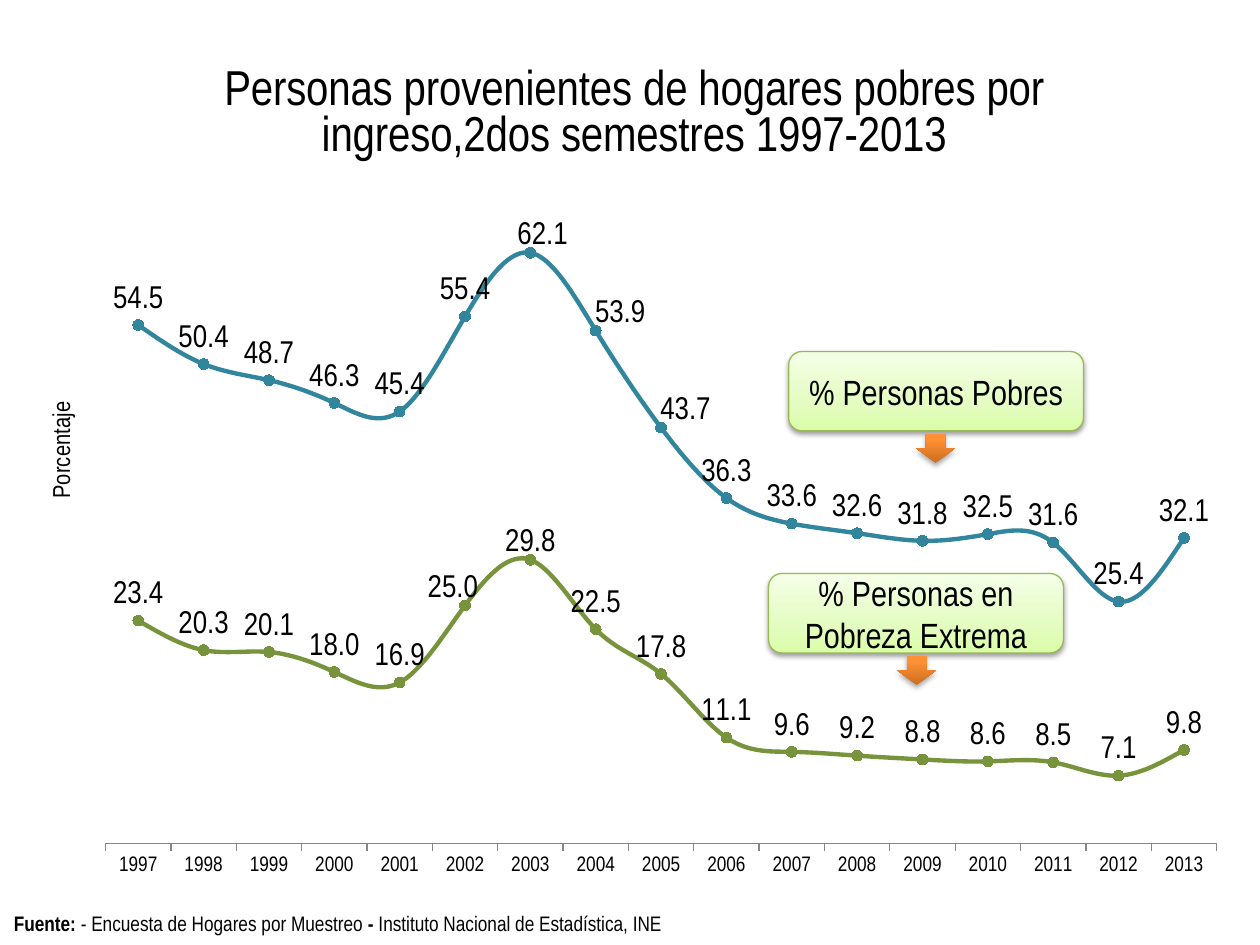
from dataclasses import dataclass

from lxml import etree
from pptx import Presentation
from pptx import util as u
from pptx.chart.data import CategoryChartData
from pptx.dml.color import RGBColor
from pptx.enum import chart as c
from pptx.enum import shapes, text
from pptx.oxml import parse_xml
from pptx.oxml.ns import nsdecls, qn

WIDTH, HEIGHT = 10, 7.5
FONT = "Arial Narrow"
BLACK = "000000"
YEARS = [str(year) for year in range(1997, 2014)]


@dataclass
class Trend:
    name: str
    colour: str
    values: list[float]
    label_shifts: dict[int, tuple[float, float]]


@dataclass
class Callout:
    label: str
    left: float
    top: float
    arrow_shift: float


@dataclass
class Finish:
    stops: list[tuple[int, str]]
    shadow_alpha: int
    shadow_distance: float


TRENDS = [
    Trend("% Personas Pobres", "31859C",
          [54.5, 50.4, 48.7, 46.3, 45.4, 55.4, 62.1, 53.9, 43.7, 36.3,
           33.6, 32.6, 31.8, 32.5, 31.6, 25.4, 32.1],
          {6: (0.01, 0.01), 7: (0.02, 0.01), 8: (0.02, 0.01)}),
    Trend("% Personas en Pobreza Extrema", "77933C",
          [23.4, 20.3, 20.1, 18.0, 16.9, 25.0, 29.8, 22.5, 17.8, 11.1,
           9.6, 9.2, 8.8, 8.6, 8.5, 7.1, 9.8],
          {5: (-0.01, 0.01), 6: (0, 0.01)}),
]
CALLOUTS = [
    Callout(TRENDS[0].name, 0.626, 0.372, 0.105),
    Callout(TRENDS[1].name, 0.61, 0.607, 0.106),
]
GREEN = Finish([(0, "DAFDA7"), (35, "E4FCC2"), (100, "F5FFE7")], 38, 1.6)
ORANGE = Finish([(0, "CC6E20"), (80, "FF9034"), (100, "FF9136")], 35, 1.8)


def rgb(colour: str) -> RGBColor:
    return RGBColor.from_string(colour)


def across(share: float) -> int:
    return u.Inches(WIDTH * share)


def down(share: float) -> int:
    return u.Inches(HEIGHT * share)


def set_font(font, size: float) -> None:
    font.name, font.size, font.bold = FONT, u.Pt(size), False
    font.color.rgb = rgb(BLACK)


def layout(x: float, y: float, size: tuple[float, float] | None = None,
           edge: bool = True):
    parts = [("layoutTarget", "inner")] if size else []
    if edge:
        parts += [("xMode", "edge"), ("yMode", "edge")]
    parts += [("x", x), ("y", y)]
    if size:
        parts += [("w", size[0]), ("h", size[1])]
    body = "".join(f'<c:{tag} val="{value}"/>' for tag, value in parts)
    return parse_xml(f'<c:layout {nsdecls("c")}><c:manualLayout>{body}'
                     '</c:manualLayout></c:layout>')


def place(element, new_layout, after: str | None) -> None:
    for old in element.findall(qn("c:layout")):
        element.remove(old)
    if after:
        element.find(qn(after)).addnext(new_layout)
    else:
        element.insert(0, new_layout)


def style_trend(series, element, trend: Trend) -> None:
    series.smooth = True
    series.format.line.color.rgb = rgb(trend.colour)
    series.format.line.width = u.Pt(2.5)
    series.marker.style, series.marker.size = c.XL_MARKER_STYLE.CIRCLE, 6
    series.marker.format.fill.solid()
    series.marker.format.fill.fore_color.rgb = rgb(trend.colour)
    series.marker.format.line.color.rgb = rgb(trend.colour)
    labels = series.data_labels
    labels.show_value, labels.position = True, c.XL_LABEL_POSITION.ABOVE
    labels.number_format, labels.number_format_is_linked = "0.0", False
    set_font(labels.font, 18)
    for index in trend.label_shifts:
        label = series.points[index].data_label
        label.position = c.XL_LABEL_POSITION.ABOVE
        set_font(label.font, 18)
    for label in element.iter(qn("c:dLbl")):
        index = int(label.find(qn("c:idx")).get("val"))
        place(label, layout(*trend.label_shifts[index], edge=False), "c:idx")


def draw_chart(slide) -> None:
    data = CategoryChartData(number_format="0.0")
    data.categories = YEARS
    for trend in TRENDS:
        data.add_series(trend.name, trend.values)
    chart = slide.shapes.add_chart(
        c.XL_CHART_TYPE.LINE_MARKERS, u.Inches(0.16), u.Inches(0.16),
        u.Inches(9.69), u.Inches(6.95), data).chart
    chart.has_legend = False
    set_font(chart.font, 10)
    chart.plots[0].vary_by_categories = False
    elements = list(chart.element.iter(qn("c:ser")))
    for series, element, trend in zip(chart.plots[0].series, elements, TRENDS):
        style_trend(series, element, trend)

    years, percent = chart.category_axis, chart.value_axis
    set_font(years.tick_labels.font, 12)
    years.major_tick_mark = c.XL_TICK_MARK.OUTSIDE
    years.format.line.color.rgb = rgb("868686")
    percent.minimum_scale, percent.maximum_scale = 0, 70
    percent.has_major_gridlines = False
    percent.visible = False

    headings = [
        (chart.chart_title, 28, (0.16, 0.04),
         "Personas provenientes de hogares pobres por "
         "ingreso,2dos semestres 1997-2013"),
        (percent.axis_title, 14, (0.02, 0.43), "Porcentaje"),
    ]
    for title, size, corner, wording in headings:
        title.text_frame.text = wording
        set_font(title.text_frame.paragraphs[0].font, size)
    for element, heading in zip(chart.element.iter(qn("c:title")), headings):
        place(element, layout(*heading[2]), "c:tx")
    turned = percent.axis_title.text_frame
    turned._txBody.bodyPr.set("rot", "-5400000")
    turned._txBody.bodyPr.set("vert", "horz")
    plot_area = next(chart.element.iter(qn("c:plotArea")))
    place(plot_area, layout(0.07, 0.18, (0.91, 0.76)), None)


def apply_finish(shape, finish: Finish) -> None:
    shape.shadow.inherit = False
    shape.fill.background()
    stops = "".join(f'<a:gs pos="{pos * 1000}"><a:srgbClr val="{colour}"/></a:gs>'
                    for pos, colour in finish.stops)
    gradient = parse_xml(
        f'<a:gradFill {nsdecls("a")} rotWithShape="0"><a:gsLst>{stops}</a:gsLst>'
        '<a:lin ang="16200000" scaled="0"/></a:gradFill>')
    properties = shape.element.spPr
    properties.replace(properties.find(qn("a:noFill")), gradient)
    shadow = etree.SubElement(
        properties.find(qn("a:effectLst")), qn("a:outerShdw"),
        blurRad=str(u.Pt(3.1)), dist=str(u.Pt(finish.shadow_distance)),
        dir="5400000", rotWithShape="0")
    colour = etree.SubElement(shadow, qn("a:srgbClr"), val=BLACK)
    etree.SubElement(colour, qn("a:alpha"), val=str(finish.shadow_alpha * 1000))


def draw_callout(slide, callout: Callout) -> None:
    box = slide.shapes.add_shape(
        shapes.MSO_SHAPE.ROUNDED_RECTANGLE, across(callout.left),
        down(callout.top), across(0.234), down(0.084))
    apply_finish(box, GREEN)
    box.line.color.rgb, box.line.width = rgb("98B955"), u.Pt(0.75)
    frame = box.text_frame
    frame.text, frame.word_wrap = callout.label, True
    frame.vertical_anchor = text.MSO_ANCHOR.MIDDLE
    frame.paragraphs[0].alignment = text.PP_ALIGN.CENTER
    set_font(frame.paragraphs[0].font, 20)
    arrow = slide.shapes.add_shape(
        shapes.MSO_SHAPE.RIGHT_ARROW, across(callout.left + callout.arrow_shift),
        down(callout.top + 0.082), across(0.023), down(0.041))
    arrow.rotation = 90
    apply_finish(arrow, ORANGE)
    arrow.line.fill.background()


def draw_source(slide) -> None:
    table = slide.shapes.add_table(
        1, 1, u.Inches(0.1), u.Inches(7.24), u.Inches(5.37), u.Inches(0.21)).table
    table.first_row = table.horz_banding = False
    cell = table.cell(0, 0)
    cell.fill.background()
    cell.vertical_anchor = text.MSO_ANCHOR.MIDDLE
    cell.margin_left = cell.margin_right = cell.margin_top = u.Inches(0.01)
    cell.margin_bottom = 0
    wordings = ["Fuente:", " - Encuesta de Hogares por Muestreo ", "- ",
                "Instituto Nacional de Estadística, INE"]
    for index, wording in enumerate(wordings):
        run = cell.text_frame.paragraphs[0].add_run()
        run.text = wording
        set_font(run.font, 12)
        run.font.bold = index % 2 == 0


def main() -> None:
    presentation = Presentation()
    presentation.slide_width, presentation.slide_height = across(1), down(1)
    slide = presentation.slides.add_slide(presentation.slide_layouts[6])
    draw_chart(slide)
    draw_source(slide)
    for callout in CALLOUTS:
        draw_callout(slide, callout)
    presentation.save("out.pptx")


if __name__ == "__main__":
    main()
